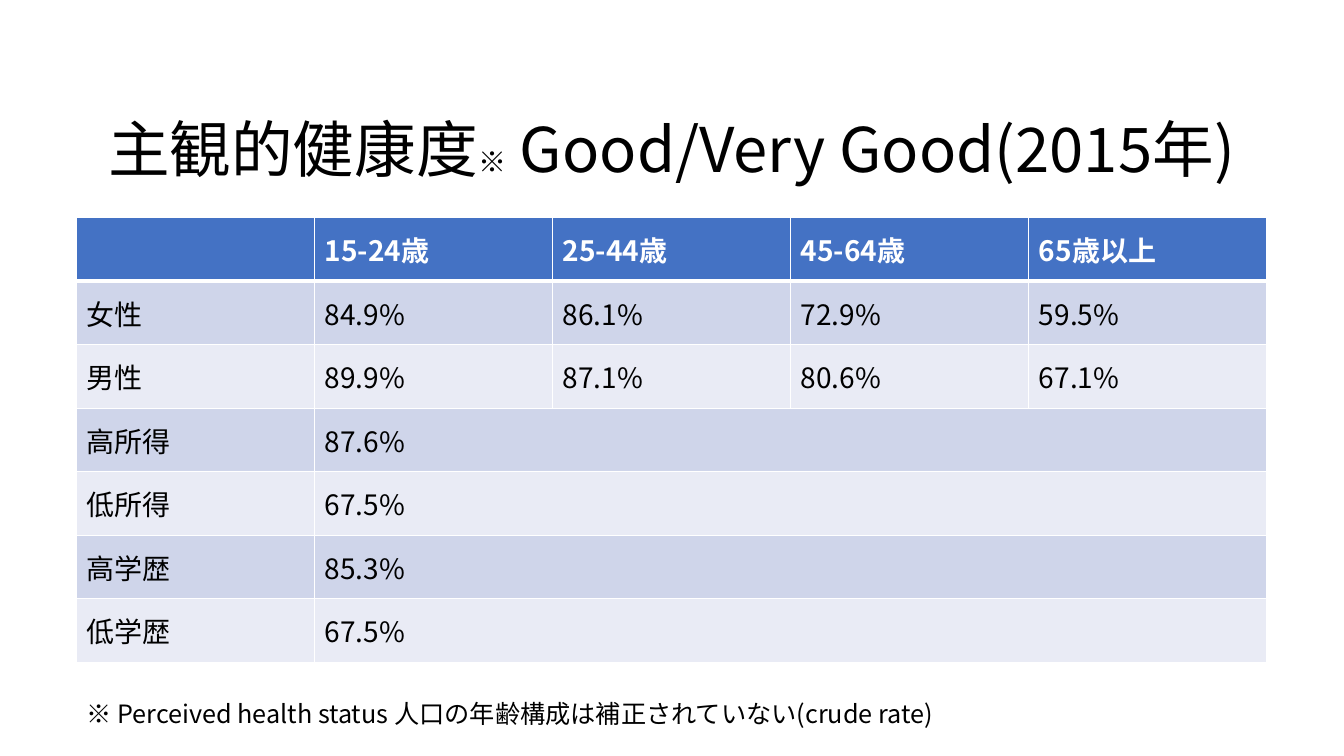
from dataclasses import dataclass

from lxml.etree import SubElement
from pptx import Presentation
from pptx.dml.color import RGBColor
from pptx.enum.text import MSO_ANCHOR as Anchor, MSO_AUTO_SIZE as AutoSize, PP_ALIGN as Align
from pptx.oxml.ns import qn
from pptx.util import Pt

FONT = "Noto Sans CJK JP"
BLACK, WHITE = "000000", "FFFFFF"
HEADER_FILL = "4472C4"
BAND_FILLS = ("CFD5EA", "E9EBF5")
LEFT, WIDTH = 54.72, 850.3
TABLE_TOP, ROW_HEIGHT = 155.5, 45.36


@dataclass
class HealthRow:
    label: str
    values: tuple[str, ...]


AGES = HealthRow("", ("15-24歳", "25-44歳", "45-64歳", "65歳以上"))
GROUPS = [
    HealthRow("女性", ("84.9%", "86.1%", "72.9%", "59.5%")),
    HealthRow("男性", ("89.9%", "87.1%", "80.6%", "67.1%")),
    HealthRow("高所得", ("87.6%",)),
    HealthRow("低所得", ("67.5%",)),
    HealthRow("高学歴", ("85.3%",)),
    HealthRow("低学歴", ("67.5%",)),
]


def rgb(value: str) -> RGBColor:
    return RGBColor.from_string(value)


def add_text(p, text: str, *, size: float, color: str = BLACK, bold: bool = False) -> None:
    r = p.add_run()
    r.text = text
    r.font.name, r.font.size, r.font.bold = FONT, Pt(size), bold
    r.font.color.rgb = rgb(color)
    SubElement(r.font._element, qn("a:ea"), typeface=FONT)


def set_borders(cell, *, top: float = 1, bottom: float = 1) -> None:
    """Draw white cell borders; call before the fill, which must follow them."""
    tc_pr = cell._tc.get_or_add_tcPr()
    for side, width in (("L", 1), ("R", 1), ("T", top), ("B", bottom)):
        ln = SubElement(tc_pr, qn(f"a:ln{side}"), w=str(Pt(width)))
        fill = SubElement(ln, qn("a:solidFill"))
        SubElement(fill, qn("a:srgbClr"), val=WHITE)


def add_title(s) -> None:
    title = s.shapes.title
    title.left, title.top, title.width, title.height = Pt(LEFT), Pt(67), Pt(WIDTH), Pt(69)
    tf = title.text_frame
    tf.word_wrap, tf.auto_size = True, AutoSize.NONE
    tf.vertical_anchor = Anchor.BOTTOM
    p = tf.paragraphs[0]
    p.alignment, p.line_spacing = Align.CENTER, 0.9
    add_text(p, "主観的健康度", size=44)
    add_text(p, "※", size=20)
    add_text(p, " Good/Very Good(2015年)", size=44)


def add_health_table(s) -> None:
    rows = [AGES, *GROUPS]
    columns = 1 + len(AGES.values)
    table = s.shapes.add_table(len(rows), columns, Pt(LEFT), Pt(TABLE_TOP),
                               Pt(WIDTH), Pt(ROW_HEIGHT * len(rows))).table
    for column in table.columns:
        column.width = Pt(WIDTH / columns)
    for i, row in enumerate(rows):
        table.rows[i].height = Pt(ROW_HEIGHT)
        header = i == 0
        texts = (row.label, *row.values)
        for j in range(columns):
            cell = table.cell(i, j)
            set_borders(cell, top=3 if i == 1 else 1, bottom=3 if header else 1)
            cell.fill.solid()
            cell.fill.fore_color.rgb = rgb(HEADER_FILL if header else BAND_FILLS[(i - 1) % 2])
            cell.vertical_anchor = Anchor.MIDDLE
            if j < len(texts) and texts[j]:
                add_text(cell.text_frame.paragraphs[0], texts[j], size=20,
                         color=WHITE if header else BLACK, bold=header)
        if len(row.values) == 1:
            table.cell(i, 1).merge(table.cell(i, columns - 1))


def add_footnote(s) -> None:
    tf = s.shapes.add_textbox(Pt(LEFT), Pt(495.4), Pt(842.4), Pt(28.8)).text_frame
    tf.word_wrap, tf.auto_size = True, AutoSize.SHAPE_TO_FIT_TEXT
    add_text(tf.paragraphs[0],
             "※ Perceived health status 人口の年齢構成は補正されていない(crude rate)", size=18)


def main() -> None:
    prs = Presentation()
    prs.slide_width, prs.slide_height = Pt(960), Pt(540)
    s = prs.slides.add_slide(prs.slide_layouts[5])
    add_title(s)
    add_health_table(s)
    add_footnote(s)
    prs.save("out.pptx")


if __name__ == "__main__":
    main()
